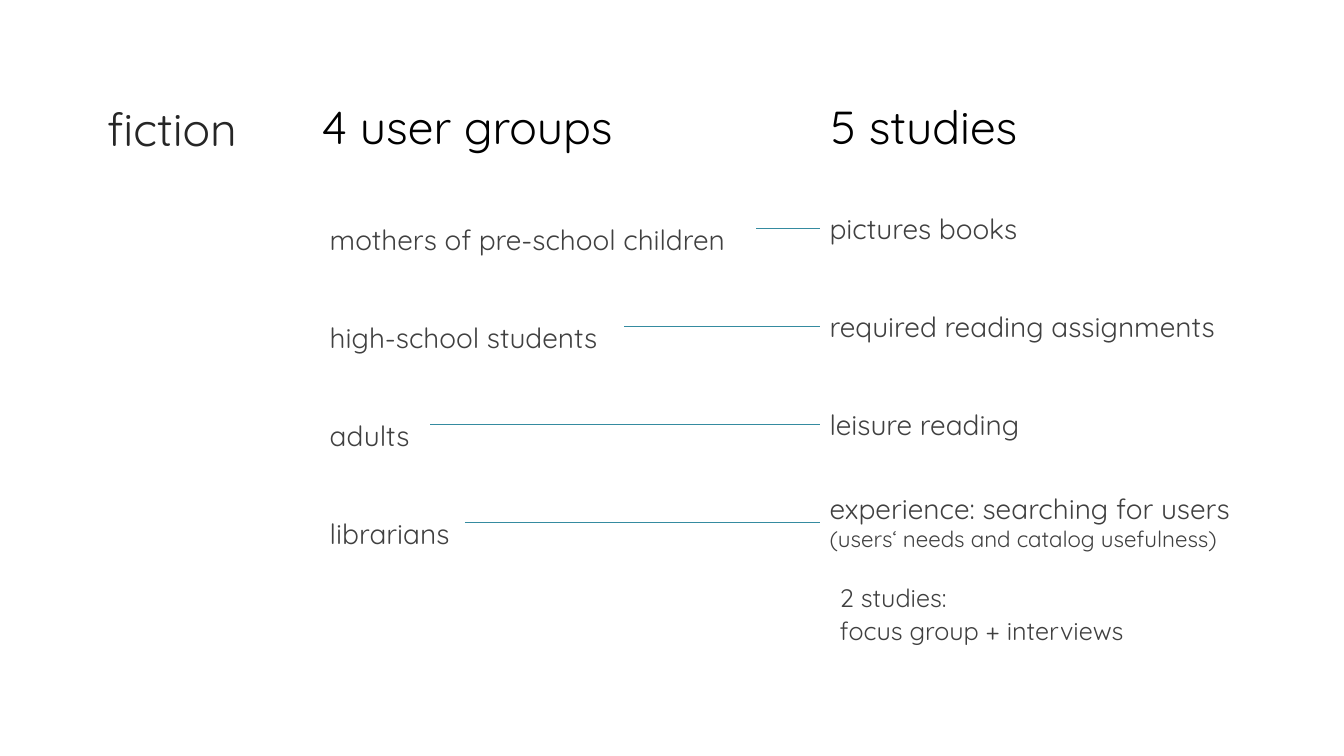
"""Build a slide that links four user groups to five studies about fiction."""
from dataclasses import dataclass

from lxml.etree import SubElement
from pptx import Presentation
from pptx.dml.color import RGBColor
from pptx.enum.shapes import MSO_CONNECTOR
from pptx.enum.text import MSO_ANCHOR, MSO_AUTO_SIZE, PP_ALIGN
from pptx.oxml.ns import qn
from pptx.util import Inches, Pt


@dataclass(frozen=True)
class Theme:
    font: str = "Quicksand"
    black: RGBColor = RGBColor(0x00, 0x00, 0x00)
    dark: RGBColor = RGBColor(0x26, 0x26, 0x26)
    grey: RGBColor = RGBColor(0x40, 0x40, 0x40)
    line: RGBColor = RGBColor(0x35, 0x8B, 0xA0)
    heading: int = 33
    body: int = 20
    detail: int = 18
    note: int = 16


def fill_text(sp, box, text, size, color, anchor=MSO_ANCHOR.TOP,
              spacing=1.0, before=10, align=PP_ALIGN.LEFT):
    """Place a shape and set its text in one style."""
    sp.left, sp.top, sp.width, sp.height = [Inches(v) for v in box]
    tf = sp.text_frame
    tf.text = text
    tf.word_wrap = True
    tf.auto_size = MSO_AUTO_SIZE.NONE
    tf.vertical_anchor = anchor
    for p in tf.paragraphs:
        p.alignment = align
        p.line_spacing = spacing
        p.space_before = Pt(before)
        pPr = p._p.get_or_add_pPr()
        pPr.set("marL", "0")
        pPr.set("indent", "0")
        SubElement(pPr, qn("a:buNone"))
        for r in p.runs:
            r.font.name = theme.font
            r.font.size = Pt(size)
            r.font.bold = False
            r.font.color.rgb = color


theme = Theme()
prs = Presentation()
prs.slide_width = Inches(13.33)
prs.slide_height = Inches(7.5)
s = prs.slides.add_slide(prs.slide_layouts.get_by_name("Comparison"))
ph = {sp.placeholder_format.idx: sp for sp in s.placeholders}

fill_text(ph[0], (0.71, 0.95, 1.74, 0.7), "fiction", theme.heading, theme.dark,
          align=PP_ALIGN.RIGHT)
fill_text(ph[1], (3.09, 0.89, 4.4, 0.69), "4 user groups", theme.heading,
          theme.black, anchor=MSO_ANCHOR.BOTTOM)
fill_text(ph[3], (8.14, 0.89, 3.78, 0.69), "5 studies", theme.heading,
          theme.black, anchor=MSO_ANCHOR.BOTTOM)

rows = [
    ("mothers of pre-school children", 7.5, "pictures books", 2.33, 0.44),
    ("high-school students", 6.19, "required reading assignments", 4.68, 0.44),
    ("adults", 4.27, "leisure reading", 4.27, 0.44),
    ("librarians", 4.61,
     "experience: searching for users\v(users‘ needs and catalog usefulness)",
     4.46, 0.71),
]
fill_text(ph[2], (3.17, 1.66, 4.32, 5.47), "\n".join(row[0] for row in rows),
          theme.body, theme.grey, spacing=2.5)
ph[4].element.getparent().remove(ph[4].element)

study_left, first_row, row_pitch = 8.13, 2.27, 0.97
for i, (group, line_start, study, width, height) in enumerate(rows):
    middle = first_row + i * row_pitch
    sp = s.shapes.add_textbox(0, 0, 0, 0)
    fill_text(sp, (study_left, middle - height / 2, width, height), study,
              theme.body, theme.grey)
    for r in sp.text_frame.paragraphs[0].runs[1:]:
        r.font.size = Pt(theme.note)

    link = s.shapes.add_connector(MSO_CONNECTOR.STRAIGHT, Inches(line_start),
                                  Inches(middle), Inches(study_left), Inches(middle))
    link.end_connect(sp, 1)
    link.line.color.rgb = theme.line
    link.line.width = Pt(0.75)
    SubElement(link.element.spPr, qn("a:effectLst"))

sp = s.shapes.add_textbox(0, 0, 0, 0)
fill_text(sp, (8.23, 5.7, 4.68, 1.21), "2 studies:\vfocus group + interviews",
          theme.detail, theme.grey, spacing=1.1, before=30)

prs.save("out.pptx")
